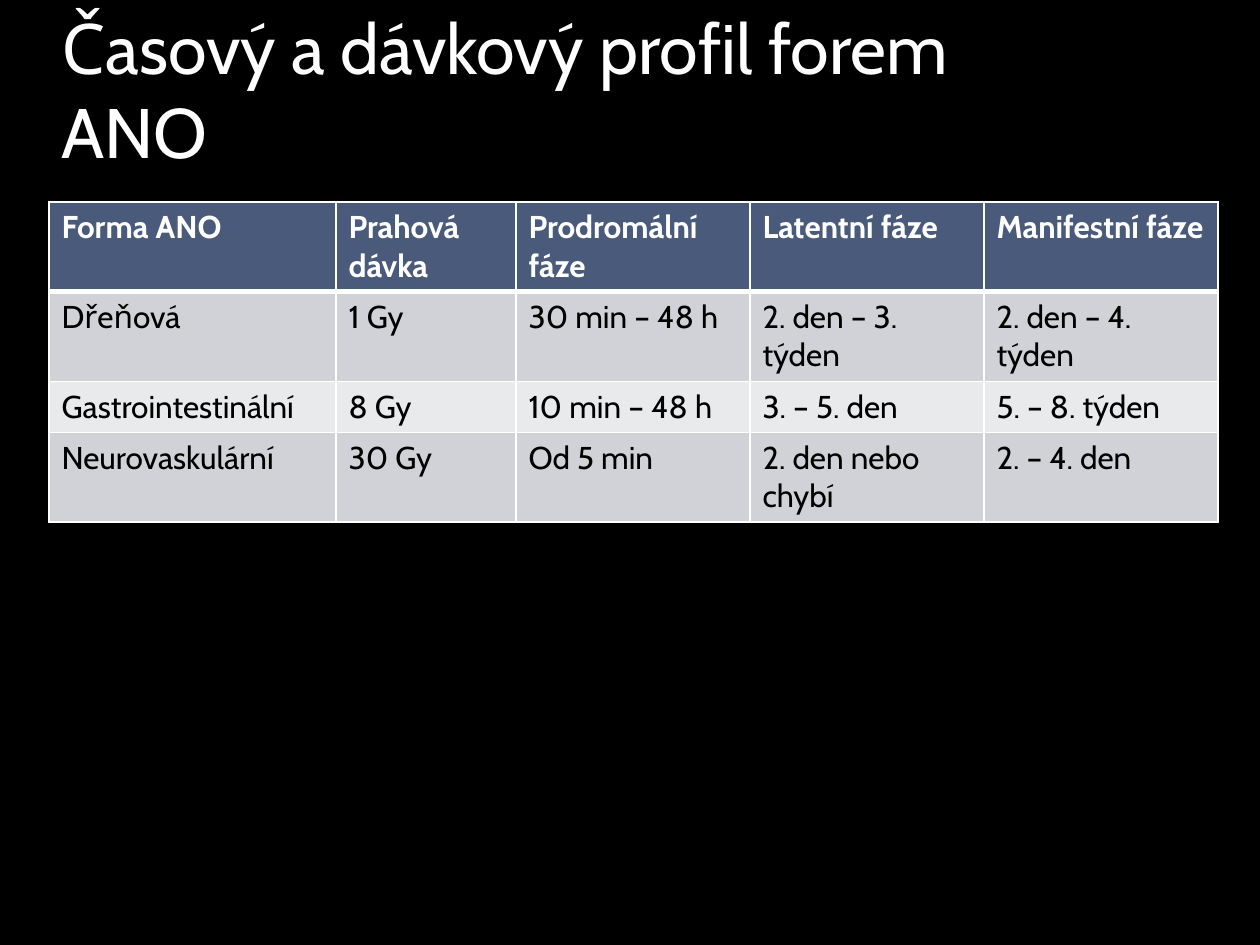
import pptx
import pptx.util
import pptx.dml.color
import pptx.enum.text
import pptx.oxml.ns
import lxml.etree

PX = 914400 // 126
COLORS = {
    "background": "000000",
    "title": "FFFFFF",
    "border": "FFFFFF",
    "header": "4A5A7A",
    "header_text": "FFFFFF",
    "odd_row": "D0D2D7",
    "even_row": "E9EAEC",
    "body_text": "000000",
}
FONT = "Cabin"


def format_runs(paragraph, size, color, bold=False):
    for run in paragraph.runs:
        run.font.name = FONT
        run.font.size = pptx.util.Pt(size)
        run.font.bold = bold
        run.font.color.rgb = pptx.dml.color.RGBColor.from_string(COLORS[color])


def add_border(cell, side, points):
    qn = pptx.oxml.ns.qn
    properties = cell._tc.get_or_add_tcPr()
    line = lxml.etree.SubElement(properties, qn(f"a:ln{side}"), w=str(pptx.util.Pt(points)))
    fill = lxml.etree.SubElement(line, qn("a:solidFill"))
    lxml.etree.SubElement(fill, qn("a:srgbClr"), val=COLORS["border"])


presentation = pptx.Presentation()
presentation.slide_width = 1260 * PX
presentation.slide_height = 945 * PX
slide = presentation.slides.add_slide(presentation.slide_layouts[5])

# Background
background = slide.background.fill
background.solid()
background.fore_color.rgb = pptx.dml.color.RGBColor.from_string(COLORS["background"])

# Title
title = slide.shapes.title
title.left, title.top, title.width, title.height = 49 * PX, 32 * PX, 1058 * PX, 147 * PX
title.text_frame.text = "Časový a dávkový profil forem ANO"
title.text_frame.word_wrap = True
title.text_frame.auto_size = pptx.enum.text.MSO_AUTO_SIZE.NONE
title.text_frame.vertical_anchor = pptx.enum.text.MSO_ANCHOR.BOTTOM
title_paragraph = title.text_frame.paragraphs[0]
title_paragraph.alignment = pptx.enum.text.PP_ALIGN.LEFT
title_paragraph.space_before = pptx.util.Pt(4)
format_runs(title_paragraph, 40, "title")

# Table of phases by form of the syndrome
ROWS = [
    ["Forma ANO", "Prahová dávka", "Prodromální fáze", "Latentní fáze", "Manifestní fáze"],
    ["Dřeňová", "1 Gy", "30 min – 48 h", "2. den – 3. týden", "2. den – 4. týden"],
    ["Gastrointestinální", "8 Gy", "10 min – 48 h", "3. – 5. den", "5. – 8. týden"],
    ["Neurovaskulární", "30 Gy", "Od 5 min", "2. den nebo chybí", "2. – 4. den"],
]
COLUMN_WIDTHS = [287, 180, 234, 234, 234]
ROW_HEIGHTS = [89, 90, 51, 89]

table = slide.shapes.add_table(
    len(ROWS), len(COLUMN_WIDTHS), 49 * PX, 202 * PX,
    sum(COLUMN_WIDTHS) * PX, sum(ROW_HEIGHTS) * PX,
).table
for column, width in zip(table.columns, COLUMN_WIDTHS):
    column.width = width * PX
for row, height in zip(table.rows, ROW_HEIGHTS):
    row.height = height * PX

for row_index, texts in enumerate(ROWS):
    is_header = row_index == 0
    fill_name = "header" if is_header else "odd_row" if row_index % 2 else "even_row"
    for column_index, text in enumerate(texts):
        cell = table.cell(row_index, column_index)
        cell.text_frame.text = text
        format_runs(cell.text_frame.paragraphs[0], 18,
                    "header_text" if is_header else "body_text", is_header)
        # A thick rule separates the header from the body
        for side in "LRTB":
            thick = (row_index, side) in [(0, "B"), (1, "T")]
            add_border(cell, side, 3 if thick else 1)
        cell.fill.solid()
        cell.fill.fore_color.rgb = pptx.dml.color.RGBColor.from_string(COLORS[fill_name])

presentation.save("out.pptx")
